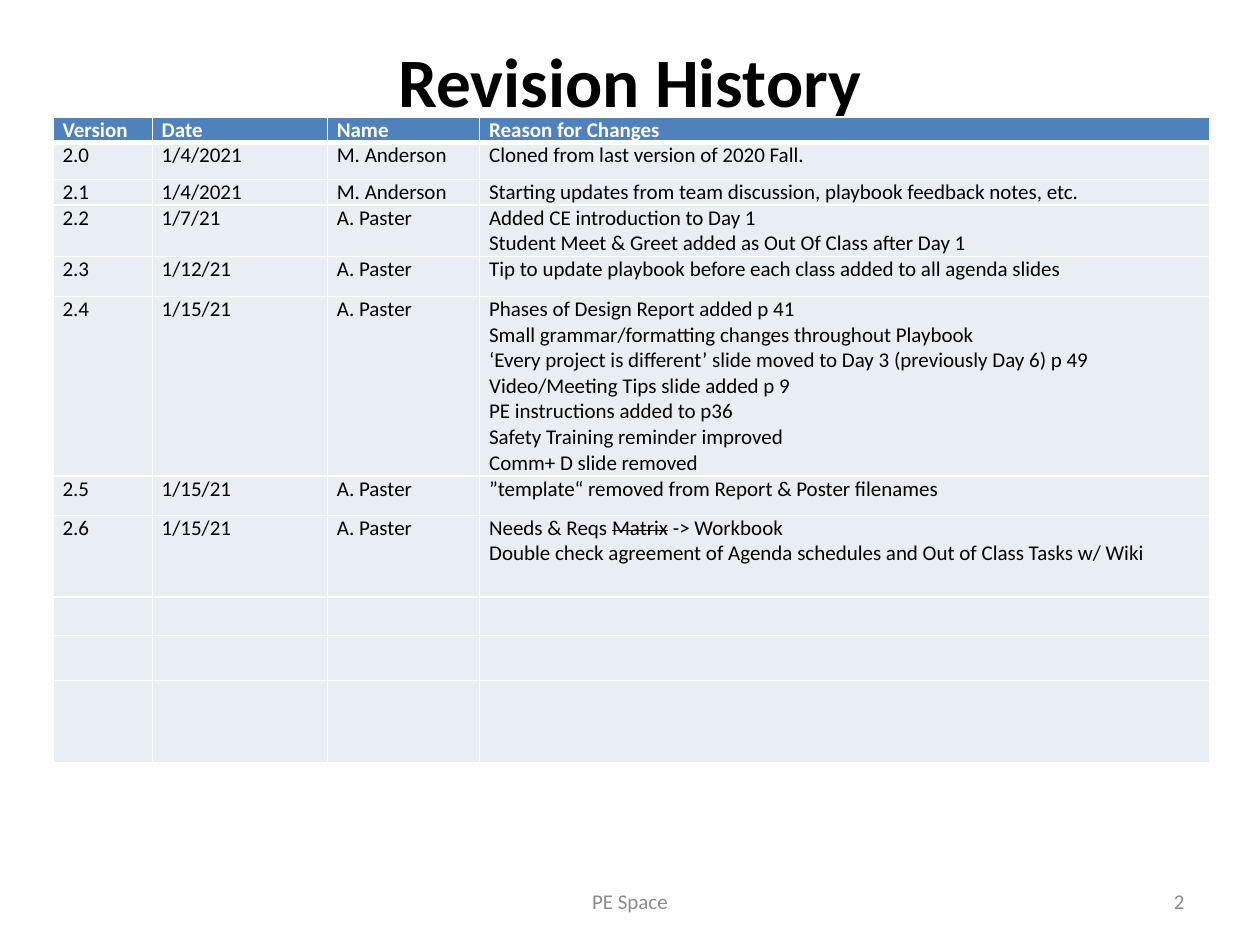
from lxml.etree import SubElement
from pptx import Presentation
from pptx.dml.color import RGBColor
from pptx.enum.text import MSO_ANCHOR as Anchor, MSO_AUTO_SIZE as AutoSize, PP_ALIGN as Align
from pptx.oxml.ns import qn
from pptx.util import Cm, Pt

COLORS = {
    "text": "000000",
    "header": "4F81BD",
    "row": "E9EDF4",
    "white": "FFFFFF",
    "footer": "8C8C8C",
}
TITLE_ONLY = 5
COLUMN_WIDTHS = [2, 3.53, 3.07, 14.71]
HEADER = ["Version", "Date", "Name", "Reason for Changes"]
HEADER_HEIGHT = 0.51

# Row height in cm, version, date, name, reasons.
# A reason given as a list holds (text, format) parts of one line.
REVISIONS = [
    (0.74, "2.0", "1/4/2021", "M. Anderson", ["Cloned from last version of 2020 Fall."]),
    (0.51, "2.1", "1/4/2021", "M. Anderson", [
        "Starting updates from team discussion, playbook feedback notes, etc."]),
    (1.03, "2.2", "1/7/21", "A. Paster", [
        "Added CE introduction to Day 1",
        "Student Meet & Greet added as Out Of Class after Day 1"]),
    (0.81, "2.3", "1/12/21", "A. Paster", [
        "Tip to update playbook before each class added to all agenda slides"]),
    (3.62, "2.4", "1/15/21", "A. Paster", [
        "Phases of Design Report added p 41",
        "Small grammar/formatting changes throughout Playbook",
        "‘Every project is different’ slide moved to Day 3 (previously Day 6) p 49",
        "Video/Meeting Tips slide added p 9",
        "PE instructions added to p36",
        "Safety Training reminder improved",
        "Comm+ D slide removed"]),
    (0.79, "2.5", "1/15/21", "A. Paster", ["”template“ removed from Report & Poster filenames"]),
    (1.65, "2.6", "1/15/21", "A. Paster", [
        [("Needs & Reqs ", {}), ("Matrix", {"strike": True}), (" -> Workbook", {})],
        "Double check agreement of Agenda schedules and Out of Class Tasks w/ Wiki"]),
]
EMPTY_ROW_HEIGHTS = [0.76, 0.91, 1.65]


def add_text(paragraph, text, *, size=12, color="text", bold=False, strike=False,
             font="Calibri", align=None):
    if align is not None:
        paragraph.alignment = align
    run = paragraph.add_run()
    run.text = text
    run.font.name = font
    run.font.size = Pt(size)
    run.font.bold = bold
    run.font.color.rgb = RGBColor.from_string(COLORS[color])
    if strike:
        run._r.get_or_add_rPr().set("strike", "sngStrike")


def add_border(cell, side, width):
    line = SubElement(cell._tc.get_or_add_tcPr(), qn(f"a:ln{side}"), w=str(Pt(width)))
    fill = SubElement(line, qn("a:solidFill"))
    SubElement(fill, qn("a:srgbClr"), val=COLORS["white"])


class SlideBuilder:
    def __init__(self, presentation):
        self.slide = presentation.slides.add_slide(presentation.slide_layouts[TITLE_ONLY])

    def title(self, text, left, top, width, height):
        shape = self.slide.shapes.title
        shape.left, shape.top, shape.width, shape.height = map(Cm, (left, top, width, height))
        frame = shape.text_frame
        frame.auto_size = AutoSize.NONE
        frame.vertical_anchor = Anchor.TOP
        frame.margin_top = 0
        add_text(frame.paragraphs[0], text, size=39.6, bold=True, align=Align.CENTER)

    def footer(self, text, left, width, align):
        box = self.slide.shapes.add_textbox(Cm(left), Cm(17.65), Cm(width), Cm(1.02))
        frame = box.text_frame
        frame.word_wrap = True
        frame.vertical_anchor = Anchor.MIDDLE
        add_text(frame.paragraphs[0], text, color="footer", align=align)

    def cell(self, cell, lines, is_header, below_header):
        cell.margin_left = cell.margin_right = Cm(0.19)
        cell.margin_top = cell.margin_bottom = 0
        widths = {"L": 1, "R": 1, "T": 3 if below_header else 1, "B": 3 if is_header else 1}
        for side, width in widths.items():
            add_border(cell, side, width)
        cell.fill.solid()
        cell.fill.fore_color.rgb = RGBColor.from_string(COLORS["header" if is_header else "row"])
        frame = cell.text_frame
        for index, line in enumerate(lines):
            paragraph = frame.add_paragraph() if index else frame.paragraphs[0]
            parts = [(line, {})] if isinstance(line, str) else line
            for text, text_format in parts:
                add_text(paragraph, text, bold=is_header,
                         color="white" if is_header else "text", **text_format)

    def table(self, rows, left, top):
        """Add a table from (height, cells) rows, each cell a list of lines."""
        width = sum(COLUMN_WIDTHS)
        height = sum(row_height for row_height, _ in rows)
        table = self.slide.shapes.add_table(
            len(rows), len(COLUMN_WIDTHS), Cm(left), Cm(top), Cm(width), Cm(height)).table
        for column, column_width in zip(table.columns, COLUMN_WIDTHS):
            column.width = Cm(column_width)
        for index, (row, (row_height, cells)) in enumerate(zip(table.rows, rows)):
            row.height = Cm(row_height)
            for cell, lines in zip(row.cells, cells):
                self.cell(cell, lines, is_header=index == 0, below_header=index == 1)


def main():
    presentation = Presentation()
    presentation.slide_width, presentation.slide_height = Cm(25.4), Cm(19.05)

    rows = [(HEADER_HEIGHT, [[label] for label in HEADER])]
    rows += [(height, [[version], [date], [name], reasons])
             for height, version, date, name, reasons in REVISIONS]
    rows += [(height, [[] for _ in HEADER]) for height in EMPTY_ROW_HEIGHTS]

    builder = SlideBuilder(presentation)
    builder.title("Revision History", 1.27, 0.76, 22.86, 3.18)
    builder.table(rows, 1.07, 2.36)
    builder.footer("PE Space", 8.68, 8.04, Align.CENTER)
    builder.footer("2", 18.2, 5.93, Align.RIGHT)
    presentation.save("out.pptx")


if __name__ == "__main__":
    main()
